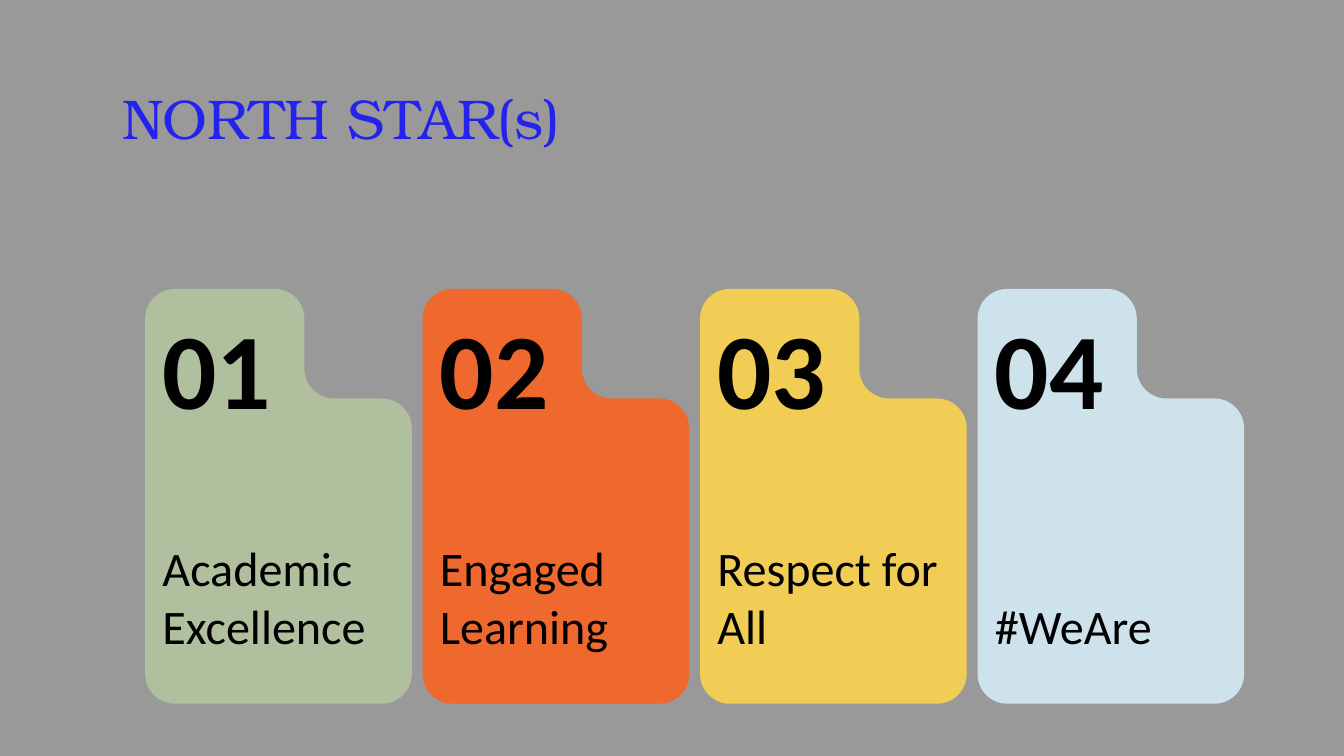
import math
from dataclasses import dataclass

import pptx
import pptx.dml.color
import pptx.enum.text
import pptx.util

Pt = pptx.util.Pt
Anchor = pptx.enum.text.MSO_ANCHOR

COLORS = {
    "back": "999999",
    "title": "2322EF",
    "text": "010101",
    "green": "B0C09F",
    "orange": "EF692F",
    "yellow": "F1CD56",
    "blue": "CDE2EB",
}

# Card grid and outline, in points
LEFT, TOP, PITCH = 77.8, 154.8, 148.64
WIDTH, HEIGHT = 142.8, 222.2
TAB, STEP, RADIUS = 85.3, 58.7, 15.9
INDENT = 9.25
STEPS = 16


@dataclass
class Card:
    number: str
    label: str
    color: str


@dataclass
class Style:
    font: str
    size: float
    color: str = "text"
    bold: bool = False


CARDS = [
    Card("01", "Academic Excellence", "green"),
    Card("02", "Engaged Learning", "orange"),
    Card("03", "Respect for All", "yellow"),
    Card("04", "#WeAre", "blue"),
]
TITLE = Style("TeX Gyre Bonum", 30, "title")
NUMBER = Style("Calibri", 57.5, bold=True)
LABEL = Style("Calibri", 25.8)


def rgb(name: str) -> pptx.dml.color.RGBColor:
    return pptx.dml.color.RGBColor.from_string(COLORS[name])


def add_text(slide, text: str, box: tuple, style: Style,
             inset: tuple = (0, 0), anchor=Anchor.TOP) -> None:
    """Add a text box; inset is (sides, top and bottom)."""
    frame = slide.shapes.add_textbox(*map(Pt, box)).text_frame
    frame.word_wrap = True
    frame.vertical_anchor = anchor
    frame.margin_left = frame.margin_right = Pt(inset[0])
    frame.margin_top = frame.margin_bottom = Pt(inset[1])
    line = frame.paragraphs[0]
    line.text = text
    line.font.name = style.font
    line.font.size = Pt(style.size)
    line.font.bold = style.bold
    line.font.color.rgb = rgb(style.color)


def folder_points(left: float, top: float) -> list:
    """Trace the tabbed card clockwise as six rounded corners."""
    r = RADIUS
    # Centre x, centre y, start angle, sweep
    corners = [
        (r, r, 180, 90),
        (TAB - r, r, 270, 90),
        (TAB + r, STEP - r, 180, -90),
        (WIDTH - r, STEP + r, 270, 90),
        (WIDTH - r, HEIGHT - r, 0, 90),
        (r, HEIGHT - r, 90, 90),
    ]
    points = []
    for x, y, start, sweep in corners:
        for i in range(STEPS + 1):
            turn = math.radians(start + sweep * i / STEPS)
            points.append((Pt(left + x + r * math.cos(turn)),
                           Pt(top + y + r * math.sin(turn))))
    return points


def add_card(slide, card: Card, left: float) -> None:
    # Folder outline
    first, *rest = folder_points(left, TOP)
    pen = slide.shapes.build_freeform(*first)
    pen.add_line_segments(rest, close=True)
    shape = pen.convert_to_shape()
    shape.shadow.inherit = False
    shape.fill.solid()
    shape.fill.fore_color.rgb = rgb(card.color)
    shape.line.fill.background()

    # Label and number
    add_text(slide, card.label, (left + INDENT, 231.8, 124, 120.2), LABEL,
             (0, 1.4), Anchor.BOTTOM)
    add_text(slide, card.number, (left + INDENT, 162, 68, 70), NUMBER)


def main() -> None:
    deck = pptx.Presentation()
    deck.slide_width, deck.slide_height = Pt(720), Pt(405)
    slide = deck.slides.add_slide(deck.slide_layouts[6])

    # Background
    fill = slide.background.fill
    fill.solid()
    fill.fore_color.rgb = rgb("back")

    # Cards and title
    for i, card in enumerate(CARDS):
        add_card(slide, card, LEFT + i * PITCH)
    add_text(slide, "NORTH STAR(s)", (58.3, 37.4, 449.3, 46), TITLE, (7.2, 7.2))

    deck.save("out.pptx")


if __name__ == "__main__":
    main()
